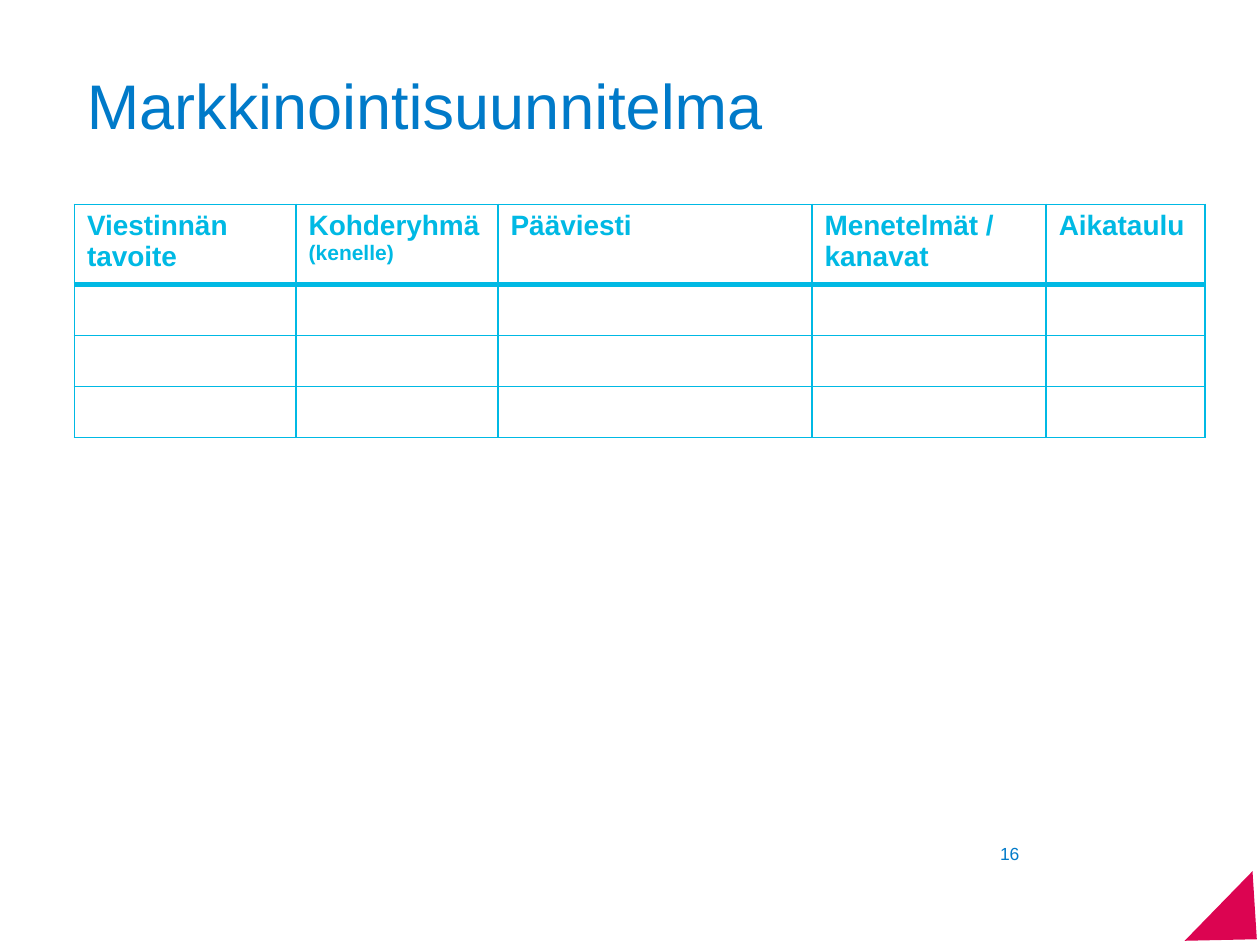
from dataclasses import dataclass

from lxml.etree import SubElement
from pptx import Presentation
from pptx.dml.color import RGBColor
from pptx.enum.shapes import MSO_SHAPE
from pptx.enum.text import MSO_ANCHOR
from pptx.oxml.ns import qn
from pptx.util import Cm, Pt


@dataclass(frozen=True)
class Theme:
    font: str = "Arial"
    blue: str = "007AC9"
    cyan: str = "00B9E4"
    red: str = "DC0451"
    title: int = 36
    head: int = 16
    note: int = 12
    page: int = 10
    thin: int = 1
    thick: int = 3


THEME = Theme()
TITLE = "Markkinointisuunnitelma"
PAGE = "16"
# Column width in cm, then heading lines with their sizes
COLS = [
    (4.47, [("Viestinnän tavoite", THEME.head)]),
    (4.07, [("Kohderyhmä", THEME.head), ("(kenelle)", THEME.note)]),
    (6.33, [("Pääviesti", THEME.head)]),
    (4.72, [("Menetelmät / kanavat", THEME.head)]),
    (3.2, [("Aikataulu", THEME.head)]),
]
ROWS = [1.5] + [1.03] * 3


def style(para, size, color, bold=False):
    font = para.font
    font.name, font.size, font.bold = THEME.font, Pt(size), bold
    font.color.rgb = RGBColor.from_string(color)


def add_text(slide, box, text, size, anchor):
    frame = slide.shapes.add_textbox(*map(Cm, box)).text_frame
    frame.word_wrap = True
    frame.vertical_anchor = anchor
    para = frame.paragraphs[0]
    para.text = text
    para.line_spacing = 0.9
    style(para, size, THEME.blue)


def set_edges(cell, top, bottom):
    """Draw all four borders; top and bottom are widths in points."""
    props = cell._tc.get_or_add_tcPr()
    widths = {"L": THEME.thin, "R": THEME.thin, "T": top, "B": bottom}
    for spot, (side, width) in enumerate(widths.items()):
        line = SubElement(props, qn(f"a:ln{side}"), w=str(Pt(width)))
        fill = SubElement(line, qn("a:solidFill"))
        SubElement(fill, qn("a:srgbClr"), val=THEME.cyan)
        props.insert(spot, line)


def add_plan(slide, left, top):
    width = sum(size for size, _ in COLS)
    frame = slide.shapes.add_table(
        len(ROWS), len(COLS), Cm(left), Cm(top), Cm(width), Cm(sum(ROWS)))
    table = frame.table
    table.first_row = table.horz_banding = False
    for row, high in zip(table.rows, ROWS):
        row.height = Cm(high)
    for col, (wide, lines) in enumerate(COLS):
        table.columns[col].width = Cm(wide)
        for row in range(len(ROWS)):
            cell = table.cell(row, col)
            cell.fill.background()
            set_edges(cell, THEME.thick if row == 1 else THEME.thin,
                      THEME.thick if row == 0 else THEME.thin)
        frame = table.cell(0, col).text_frame
        frame.text = "\n".join(text for text, _ in lines)
        for para, (_, size) in zip(frame.paragraphs, lines):
            style(para, size, THEME.cyan, bold=True)


def add_corner(slide):
    mark = slide.shapes.add_shape(
        MSO_SHAPE.ISOSCELES_TRIANGLE, Cm(23.95), Cm(18.11), Cm(1.96), Cm(1.02))
    mark.adjustments[0] = 0.47
    mark.rotation = 134.3
    mark.shadow.inherit = False
    mark.fill.solid()
    mark.fill.fore_color.rgb = RGBColor.from_string(THEME.red)
    mark.line.fill.background()


def main():
    deck = Presentation()
    deck.slide_width, deck.slide_height = Cm(25.4), Cm(19.05)
    slide = deck.slides.add_slide(deck.slide_layouts[6])
    add_text(slide, (1.5, 0.71, 22.38, 3), TITLE, THEME.title, MSO_ANCHOR.MIDDLE)
    add_plan(slide, 1.5, 4.12)
    add_text(slide, (19.91, 16.92, 1.4, 0.58), PAGE, THEME.page, MSO_ANCHOR.TOP)
    add_corner(slide)
    deck.save("out.pptx")


if __name__ == "__main__":
    main()
